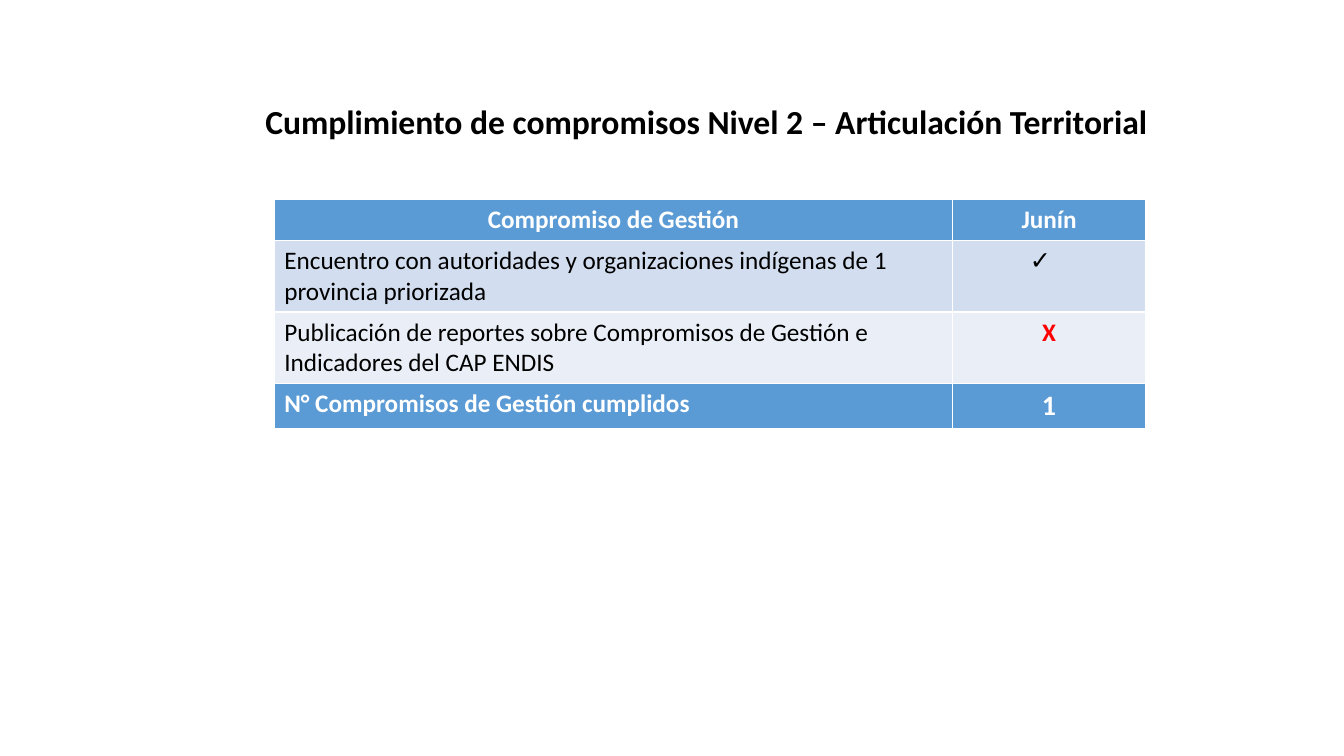
"""Builds the slide on level 2 commitments met in Junín."""
from pptx import Presentation
from pptx.dml.color import RGBColor
from pptx.enum.text import MSO_AUTO_SIZE, PP_ALIGN
from pptx.util import Inches, Pt

CENTER, LEFT = PP_ALIGN.CENTER, PP_ALIGN.LEFT
GROW = MSO_AUTO_SIZE.SHAPE_TO_FIT_TEXT
WHITE = RGBColor(0xFF, 0xFF, 0xFF)
BLACK = RGBColor(0x00, 0x00, 0x00)
RED = RGBColor(0xFF, 0x00, 0x00)
BLUE = RGBColor(0x5B, 0x9B, 0xD5)
PALE_BLUE = RGBColor(0xD2, 0xDE, 0xEF)
PALEST_BLUE = RGBColor(0xEA, 0xEF, 0xF7)

COLUMN_WIDTHS = (6.73, 1.91)
ROWS = [
    (0.4, BLUE, [("Compromiso de Gestión", CENTER, 18, WHITE, True),
                 ("Junín", CENTER, 18, WHITE, True)]),
    (0.7, PALE_BLUE, [("Encuentro con autoridades y organizaciones indígenas de 1 provincia priorizada",
                       LEFT, 18, BLACK, False),
                      ("✓", CENTER, 18, BLACK, False)]),
    (0.7, PALEST_BLUE, [("Publicación de reportes sobre Compromisos de Gestión e Indicadores del CAP ENDIS",
                         LEFT, 18, BLACK, False),
                        ("X", CENTER, 18, RED, True)]),
    (0.43, BLUE, [("N° Compromisos de Gestión cumplidos", LEFT, 18, WHITE, True),
                  ("1", CENTER, 20, WHITE, True)]),
]


def write(frame, text, align, size, color, bold):
    paragraph = frame.paragraphs[0]
    paragraph.text = text
    paragraph.alignment = align
    font = paragraph.font
    font.name, font.size, font.bold = "Calibri", Pt(size), bold
    font.color.rgb = color


deck = Presentation()
deck.slide_width, deck.slide_height = Inches(13.33), Inches(7.5)
slide = deck.slides.add_slide(deck.slide_layouts[6])

commitments = slide.shapes.add_table(
    len(ROWS), len(COLUMN_WIDTHS), Inches(2.72), Inches(1.98),
    Inches(sum(COLUMN_WIDTHS)), Inches(sum(row[0] for row in ROWS))).table
commitments.last_row = True
for column, width in zip(commitments.columns, COLUMN_WIDTHS):
    column.width = Inches(width)
for row, (height, fill, entries) in zip(commitments.rows, ROWS):
    row.height = Inches(height)
    for cell, entry in zip(row.cells, entries):
        cell.fill.solid()
        cell.fill.fore_color.rgb = fill
        write(cell.text_frame, *entry)
commitments.cell(1, 1).margin_right = Inches(0.27)

title = slide.shapes.add_textbox(Inches(2.33), Inches(0.95), Inches(9.43), Inches(0.5)).text_frame
title.word_wrap = True
title.auto_size = GROW
write(title, "Cumplimiento de compromisos Nivel 2 – Articulación Territorial ", CENTER, 24, BLACK, True)

deck.save("out.pptx")
